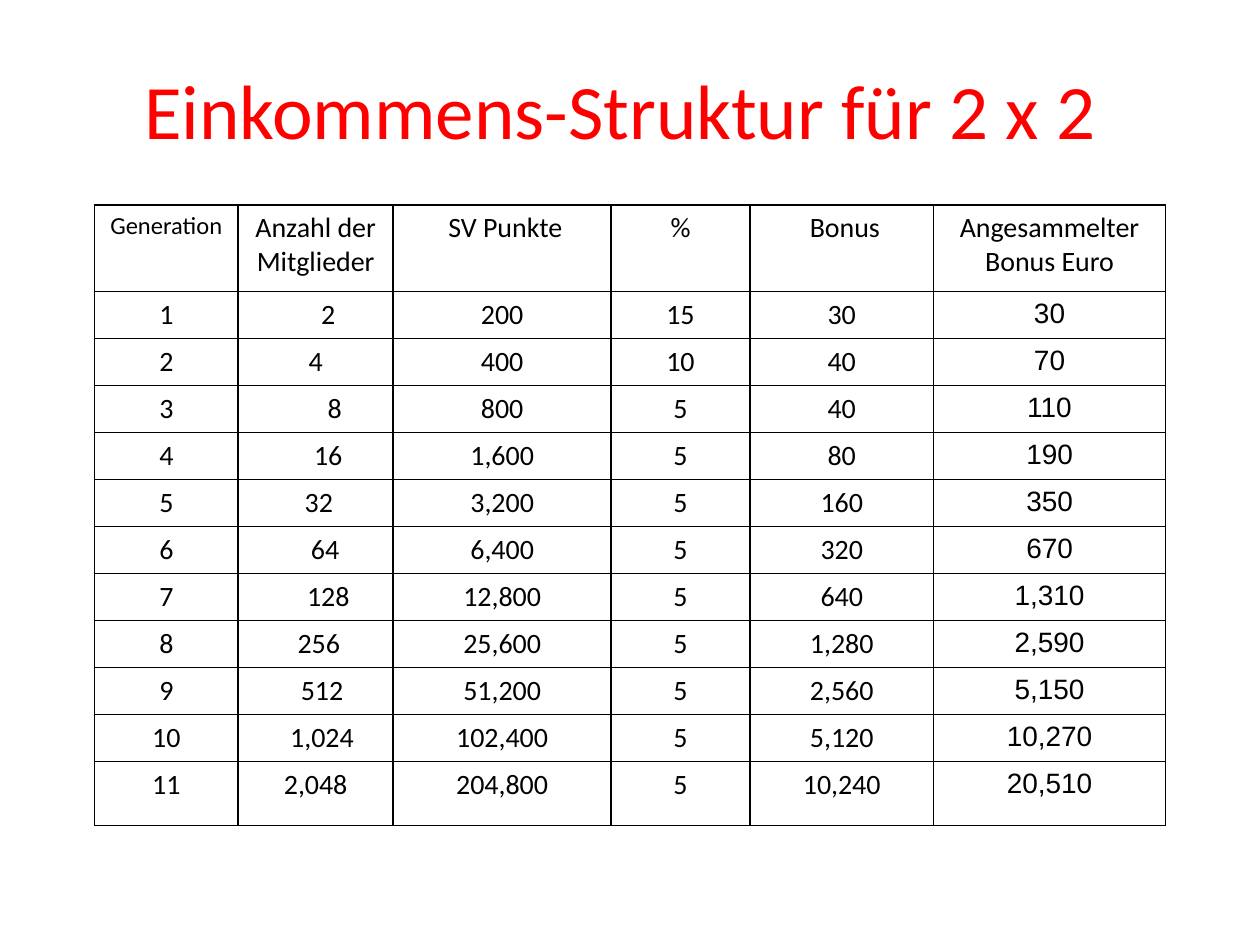
from itertools import accumulate

from lxml import etree
from pptx import Presentation
from pptx import util as u
from pptx.dml import color
from pptx.enum import text
from pptx.oxml import ns

SPACE = 3.6
HEADINGS = ["Generation", "Anzahl der Mitglieder", "SV Punkte", "%", "Bonus",
            "Angesammelter Bonus Euro"]
HEADING_INDENTS = [0, 0, 1, 0, 1, 0]
MEMBER_INDENTS = [4, 0, 6, 4, 1, 3, 4, 1, 2, 2, 0]
WIDTHS = [82.1, 88.6, 124.6, 79.2, 105.1, 132.4]
HEIGHTS = [49.7] + [26.86] * 10 + [36.7]


def rgb(hex_string):
    return color.RGBColor.from_string(hex_string)


class SlideBuilder:
    font = "Calibri"
    number_font = "Arial"
    ink = "000000"
    accent = "FF0000"
    border = 1

    def __init__(self, slide):
        self.slide = slide

    def centred_text(self, frame, content, size, font, ink):
        frame.text = content
        for paragraph in frame.paragraphs:
            paragraph.alignment = text.PP_ALIGN.CENTER
            for run in paragraph.runs:
                run.font.size = u.Pt(size)
                run.font.name = font
                run.font.color.rgb = rgb(ink)

    def title(self, content, left, top, width, height):
        heading = self.slide.shapes.add_textbox(
            u.Pt(left), u.Pt(top), u.Pt(width), u.Pt(height))
        heading.text_frame.word_wrap = False
        self.centred_text(heading.text_frame, content, 44, self.font, self.accent)

    def outline(self, cell):
        properties = cell._tc.get_or_add_tcPr()
        for side in ("a:lnL", "a:lnR", "a:lnT", "a:lnB"):
            line = etree.SubElement(properties, ns.qn(side), w=str(u.Pt(self.border)))
            fill = etree.SubElement(line, ns.qn("a:solidFill"))
            etree.SubElement(fill, ns.qn("a:srgbClr"), val=self.ink)

    def cell(self, cell, content, size, font, indent):
        cell.margin_left = u.Pt(7.2 + indent * SPACE)
        self.outline(cell)
        cell.fill.background()
        self.centred_text(cell.text_frame, content, size, font, self.ink)

    def table(self, rows, indents, left, top):
        grid = self.slide.shapes.add_table(
            len(rows), len(WIDTHS), u.Pt(left), u.Pt(top),
            u.Pt(sum(WIDTHS)), u.Pt(sum(HEIGHTS))).table
        grid.first_row = grid.horz_banding = False
        for column, width in zip(grid.columns, WIDTHS):
            column.width = u.Pt(width)
        for row, height in zip(grid.rows, HEIGHTS):
            row.height = u.Pt(height)
        for r, row in enumerate(rows):
            for c, content in enumerate(row):
                size = 14 if r == c == 0 else 16
                font = self.number_font if r and c == len(row) - 1 else self.font
                self.cell(grid.cell(r, c), content, size, font, indents[r][c])


def income_rows():
    generations = range(1, 12)
    members = [2 ** generation for generation in generations]
    points = [100 * count for count in members]
    percents = [15, 10] + [5] * 9
    bonuses = [point * percent // 100 for point, percent in zip(points, percents)]
    columns = zip(generations, members, points, percents, bonuses, accumulate(bonuses))
    return [[f"{value:,}" for value in row] for row in columns]


def main():
    deck = Presentation()
    deck.slide_width, deck.slide_height = u.Pt(720), u.Pt(540)
    builder = SlideBuilder(deck.slides.add_slide(deck.slide_layouts[6]))
    indents = [HEADING_INDENTS] + [[0, indent, 0, 0, 0, 0] for indent in MEMBER_INDENTS]
    builder.table([HEADINGS] + income_rows(), indents, 54, 117)
    builder.title("Einkommens-Struktur für 2 x 2", 74, 32.4, 561.6, 61)
    deck.save("out.pptx")


if __name__ == "__main__":
    main()
